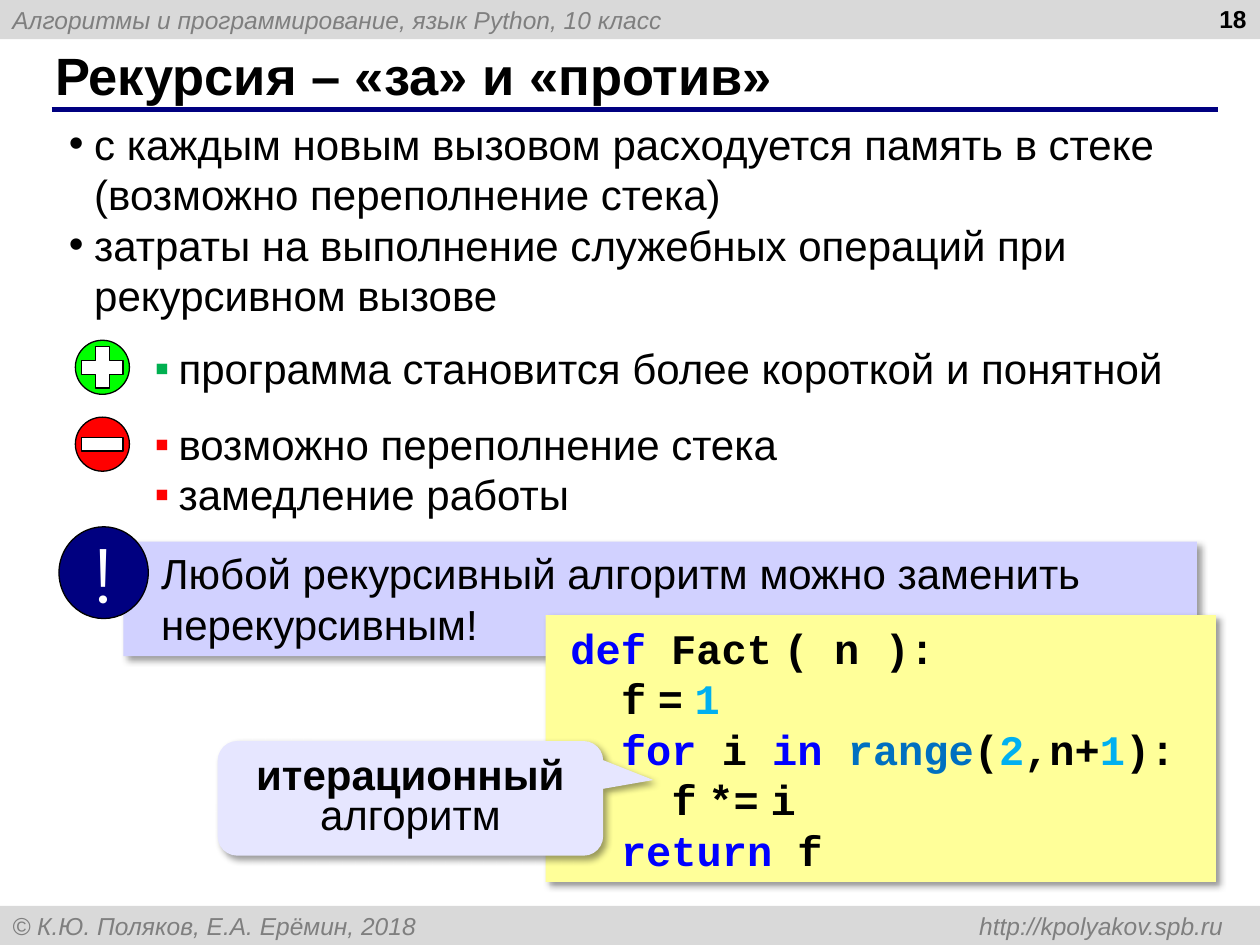
from lxml import etree
from pptx import Presentation
from pptx.dml.color import RGBColor
from pptx.enum.shapes import MSO_CONNECTOR, MSO_SHAPE
from pptx.enum.text import MSO_ANCHOR, PP_ALIGN
from pptx.oxml.ns import qn
from pptx.util import Cm, Pt

RECT, OVAL, CROSS = MSO_SHAPE.RECTANGLE, MSO_SHAPE.OVAL, MSO_SHAPE.CROSS
CALL = MSO_SHAPE.ROUNDED_RECTANGULAR_CALLOUT
LINE = MSO_CONNECTOR.STRAIGHT
TOP, MID = MSO_ANCHOR.TOP, MSO_ANCHOR.MIDDLE
LEFT, RIGHT, CENTER = PP_ALIGN.LEFT, PP_ALIGN.RIGHT, PP_ALIGN.CENTER

WIDE, HIGH, BAR = 25.4, 19.05, 0.79
BLACK, WHITE, NAVY, GRAY = "000000", "FFFFFF", "000080", "7F7F7F"
KEY, NUM, FUNC = "0000FF", "00B0F0", "0070C0"
MONO, SANS = "Courier New", "Arial"

BARS = [
    (0, "Алгоритмы и программирование, язык Python, 10 класс"),
    (HIGH - BAR, "© К.Ю. Поляков, Е.А. Ерёмин, 2018\thttp://kpolyakov.spb.ru"),
]
TITLE = "Рекурсия – «за» и «против»"
LISTS = [
    ((1.14, 2.26, 23.34, 4.37), "•", BLACK, 0.51, [
        "с каждым новым вызовом расходуется память в стеке (возможно переполнение стека)",
        "затраты на выполнение служебных операций при рекурсивном вызове"]),
    ((2.87, 6.78, 21.44, 1.3), "▪", "00B050", 0.48, [
        "программа становится более короткой и понятной"]),
    ((2.87, 8.31, 20.9, 2.31), "▪", "FF0000", 0.48, [
        "возможно переполнение стека", "замедление работы"]),
]
SIGNS = [(6.86, "00FF00", CROSS, 0.83), (8.41, "FF0000", RECT, 0.28)]
NOTE = "Любой рекурсивный алгоритм можно заменить нерекурсивным!"
GAP = (" ", BLACK, SANS)
CODE = [
    (0, [("def ", KEY), ("Fact", BLACK), GAP, ("( n ):", BLACK)]),
    (1, [("f", BLACK), GAP, ("=", BLACK), GAP, ("1", NUM)]),
    (1, [("for ", KEY), ("i ", BLACK), ("in ", KEY), ("range", FUNC), ("(", BLACK),
         ("2", NUM), (",n+", BLACK), ("1", NUM), ("):", BLACK)]),
    (2, [("f", BLACK), GAP, ("*=", BLACK), GAP, ("i", BLACK)]),
    (1, [("return ", KEY), ("f", BLACK)]),
]
STEP = 1.02


def tint(code):
    """Turn a hex string into a colour."""
    return RGBColor.from_string(code)


def node(base, tag, **attrs):
    """Add a DrawingML child element."""
    return etree.SubElement(base, qn("a:" + tag), attrs)


def put(home, kind, box, fill, edge=None, shade=False):
    """Add a filled shape with an optional edge and shadow."""
    shape = home.add_shape(kind, *map(Cm, box))
    shape.fill.solid()
    shape.fill.fore_color.rgb = tint(fill)
    if edge:
        shape.line.color.rgb = tint(edge)
        shape.line.width = Pt(0.75)
    else:
        shape.line.fill.background()
    shape.shadow.inherit = False
    if shade:
        glow = node(shape.element.spPr.find(qn("a:effectLst")), "outerShdw",
                    blurRad=str(Pt(4)), dist=str(Pt(3)), dir="2700000",
                    algn="tl", rotWithShape="0")
        node(node(glow, "srgbClr", val=BLACK), "alpha", val="40000")
    return shape


def frame(shape, anchor=TOP, wrap=True):
    """Prepare the text frame of a shape."""
    text = shape.text_frame
    text.word_wrap = wrap
    text.vertical_anchor = anchor
    return text


def style(para, size, color=BLACK, bold=False, slant=False, face=SANS, align=LEFT):
    """Set the font and alignment of a paragraph."""
    para.alignment = align
    font = para.font
    font.name, font.size, font.bold, font.italic = face, Pt(size), bold, slant
    font.color.rgb = tint(color)


def indent(para, left, first=0):
    """Set the left margin and first-line indent, and return the properties."""
    props = para._p.get_or_add_pPr()
    props.set("marL", str(Cm(left)))
    props.set("indent", str(Cm(first)))
    return props


def rows(text, count):
    """Return the wanted number of paragraphs."""
    return [text.paragraphs[0]] + [text.add_paragraph() for _ in range(count - 1)]


def label(shape, words, size, anchor=TOP, wrap=True, **looks):
    """Write a single styled paragraph and return it."""
    para = frame(shape, anchor, wrap).paragraphs[0]
    para.add_run().text = words
    style(para, size, **looks)
    return para


def main():
    """Build the slide."""
    deck = Presentation()
    deck.slide_width, deck.slide_height = Cm(WIDE), Cm(HIGH)
    slide = deck.slides.add_slide(deck.slide_layouts[6])
    home = slide.shapes

    for top, words in BARS:
        bar = put(home, RECT, (0, top, WIDE, BAR), "D9D9D9")
        props = bar.text_frame.paragraphs[0]._p.get_or_add_pPr()
        node(node(props, "tabLst"), "tab", pos=str(Cm(24.41)), algn="r")
        label(bar, words, 14, MID, color=GRAY, slant=True)

    rule = home.add_connector(LINE, Cm(1.04), Cm(2.21), Cm(24.56), Cm(2.21))
    rule.line.color.rgb = tint(NAVY)
    rule.line.width = Pt(3)
    node(rule.element.spPr, "effectLst")

    head = home.add_textbox(*map(Cm, (0.86, 0.84, 23.27, 1.32)))
    label(head, TITLE, 30, MID, bold=True)
    page = home.add_textbox(*map(Cm, (19.46, -0.05, 5.92, 1.32)))
    label(page, "18", 14, bold=True, align=RIGHT)

    for box, mark, color, hang, lines in LISTS:
        text = frame(home.add_textbox(*map(Cm, box)))
        for para, words in zip(rows(text, len(lines)), lines):
            para.add_run().text = words
            props = indent(para, hang, -hang)
            node(node(props, "buClr"), "srgbClr", val=color)
            node(props, "buFont", typeface=SANS)
            node(props, "buChar", char=mark)
            style(para, 24)

    disc, arm = 1.09, 0.83
    for top, color, kind, tall in SIGNS:
        group = home.add_group_shape().shapes
        put(group, OVAL, (1.52, top, disc, disc), color, BLACK)
        spot = (1.52 + (disc - arm) / 2, top + (disc - tall) / 2, arm, tall)
        sign = put(group, kind, spot, WHITE, BLACK)
        if kind == CROSS:
            sign.adjustments[0] = 0.33

    group = home.add_group_shape().shapes
    note = put(group, RECT, (2.49, 10.92, 21.64, 2.31), "D1D1FF", shade=True)
    indent(label(note, NOTE, 24), 0.51)
    badge = put(group, OVAL, (1.19, 10.62, 1.8, 1.85), NAVY, BLACK)
    label(badge, "!", 44, MID, False, color=WHITE, face="Montserrat", align=CENTER)

    code = put(home, RECT, (11, 12.4, 13.51, 5.38), "FFFF99", shade=True)
    for para, (level, parts) in zip(rows(frame(code, MID), len(CODE)), CODE):
        indent(para, 0.25 + level * STEP)
        style(para, 24, bold=True, face=MONO)
        for words, color, *face in parts:
            run = para.add_run()
            run.text = words
            run.font.color.rgb = tint(color)
            if face:
                run.font.name = face[0]

    call = put(home, CALL, (4.39, 14.94, 7.77, 2.31), "E6E6FF", shade=True)
    for i, value in enumerate((0.63, -0.16, 0.17)):
        call.adjustments[i] = value
    para = label(call, "итерационный", 24, MID, align=CENTER)
    para.runs[0].font.bold = True
    para.add_run().text = " алгоритм"
    para.line_spacing = 0.8

    deck.save("out.pptx")


if __name__ == "__main__":
    main()
